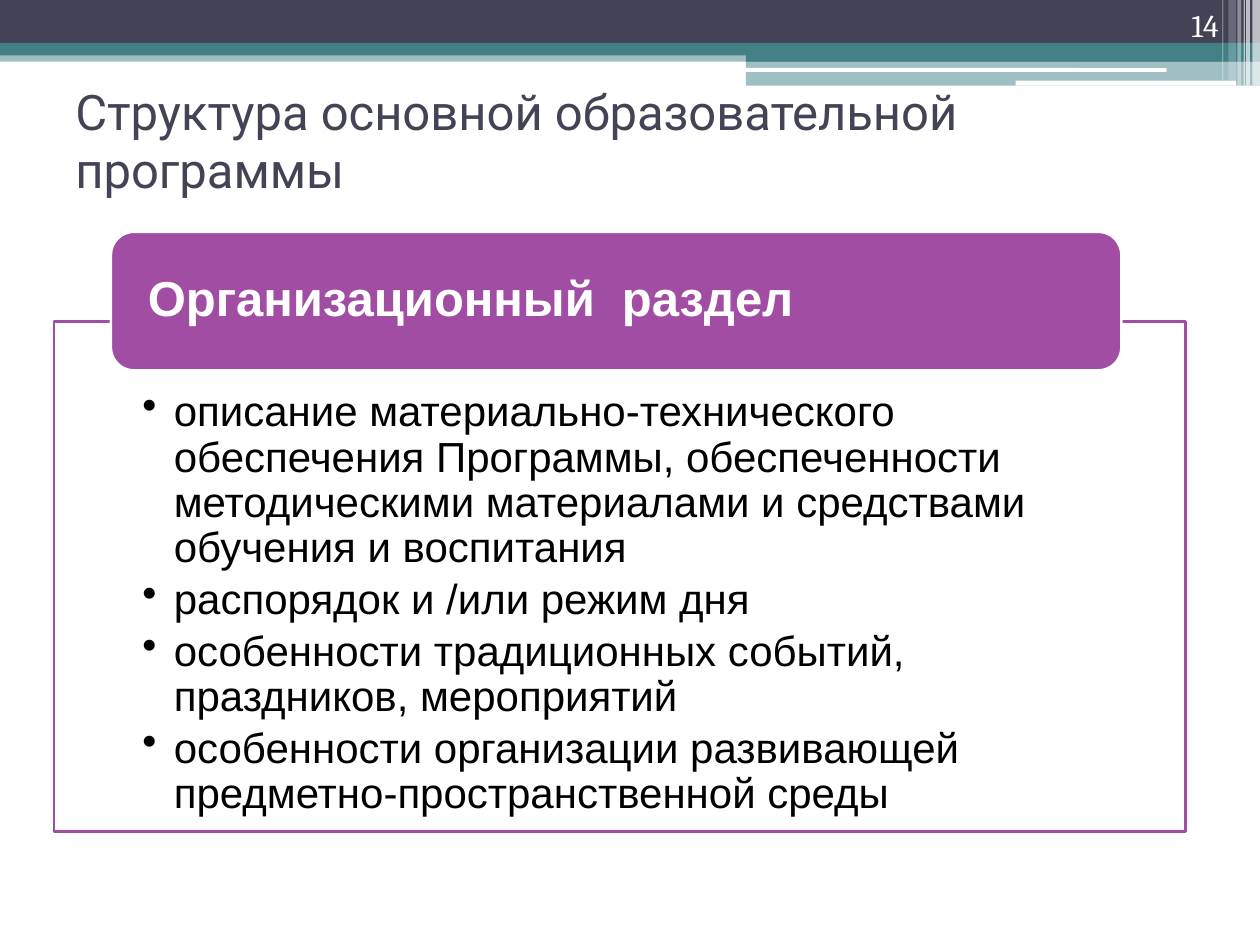
from lxml import etree
from pptx import Presentation
from pptx.dml.color import RGBColor
from pptx.enum.shapes import MSO_SHAPE as Shape
from pptx.enum.text import MSO_ANCHOR as Anchor, PP_ALIGN as Align
from pptx.oxml.ns import qn
from pptx.util import Inches, Pt

WHITE = RGBColor(0xFF, 0xFF, 0xFF)
BLACK = RGBColor(0x00, 0x00, 0x00)
NAVY = RGBColor(0x42, 0x44, 0x56)
TEAL = RGBColor(0x43, 0x80, 0x86)
PURPLE = RGBColor(0xA0, 0x4D, 0xA3)

presentation = Presentation()
presentation.slide_width = Inches(10)
presentation.slide_height = Inches(7.5)
slide = presentation.slides.add_slide(presentation.slide_layouts[6])


def add_block(kind, box, color, opacity=100, line=None):
    shape = slide.shapes.add_shape(kind, *[Inches(value) for value in box])
    shape.shadow.inherit = False
    shape.fill.solid()
    shape.fill.fore_color.rgb = color
    if opacity < 100:
        color_element = shape.fill._xPr.find(qn("a:solidFill"))[0]
        etree.SubElement(color_element, qn("a:alpha"), val=str(opacity * 1000))
    if line is None:
        shape.line.fill.background()
    else:
        shape.line.color.rgb = line
        shape.line.width = Pt(1.5)
    return shape


def write_text(shape, lines, font, size, color, anchor, insets=(0.1, 0.05), bold=False):
    frame = shape.text_frame
    frame.word_wrap = True
    frame.vertical_anchor = anchor
    frame.margin_left = frame.margin_right = Inches(insets[0])
    frame.margin_top, frame.margin_bottom = Inches(insets[1]), Inches(insets[-1])
    frame.text = "\n".join(lines)
    for paragraph in frame.paragraphs:
        paragraph.alignment = Align.LEFT
        for run in paragraph.runs:
            run.font.name = font
            run.font.size = Pt(size)
            run.font.bold = bold
            run.font.color.rgb = color
    return frame.paragraphs


# Header bands
for left, top, width, height, color, opacity in [
    (0, 0.4, 10, 0.09, TEAL, 50),
    (0, 0, 10, 0.34, NAVY, 100),
    (0, 0.34, 10, 0.1, TEAL, 100),
    (5.92, 0.39, 4.08, 0.1, TEAL, 100),
    (5.92, 0.48, 4.08, 0.2, TEAL, 50),
]:
    add_block(Shape.RECTANGLE, (left, top, width, height), color, opacity)

# White bars cut into the header
for box in [(5.91, 0.54, 3.35, 0.03), (8.06, 0.64, 1.75, 0.04)]:
    add_block(Shape.ROUNDED_RECTANGLE, box, WHITE)

# Translucent stripes at the right edge
for left, width, height, opacity in [
    (9.94, 0.06, 0.68, 65),
    (9.89, 0.03, 0.68, 65),
    (9.87, 0.01, 0.68, 60),
    (9.82, 0.03, 0.68, 40),
    (9.75, 0.06, 0.64, 20),
    (9.7, 0.01, 0.64, 30),
]:
    add_block(Shape.RECTANGLE, (left, 0, width, height), WHITE, opacity)

# Title and slide number
title = slide.shapes.add_textbox(Inches(0.5), Inches(0.52), Inches(9), Inches(1.18))
write_text(title, ["Структура основной образовательной программы"],
           "Roboto", 28, NAVY, Anchor.MIDDLE)
number = slide.shapes.add_textbox(Inches(8.94), 0, Inches(0.83), Inches(0.4))
write_text(number, ["14"], "Cambria", 18, WHITE, Anchor.BOTTOM)[0].alignment = Align.RIGHT

# Framed bullet list
frame_box = add_block(Shape.RECTANGLE, (0.43, 2.55, 8.98, 4.05), WHITE, 90, PURPLE)
items = [
    "описание материально-технического обеспечения Программы, обеспеченности "
    "методическими материалами и средствами обучения и воспитания",
    "распорядок и /или режим дня",
    "особенности традиционных событий, праздников, мероприятий",
    "особенности организации развивающей предметно-пространственной среды",
]
for paragraph in write_text(frame_box, items, "Arial", 24, BLACK, Anchor.TOP,
                            (0.7, 0.55, 0.19)):
    paragraph.line_spacing = 0.9
    paragraph.space_after = Pt(3.6)
    properties = paragraph._p.get_or_add_pPr()
    properties.set("marL", str(Inches(0.25)))
    properties.set("indent", str(-Inches(0.25)))
    etree.SubElement(properties, qn("a:buChar"), char="•")

# Section heading over the frame
heading = add_block(Shape.ROUNDED_RECTANGLE, (0.88, 1.84, 8.02, 1.1), PURPLE, line=WHITE)
write_text(heading, ["Организационный  раздел"], "Arial", 28, WHITE, Anchor.MIDDLE,
           (0.24, 0), bold=True)[0].line_spacing = 0.9

presentation.save("out.pptx")
